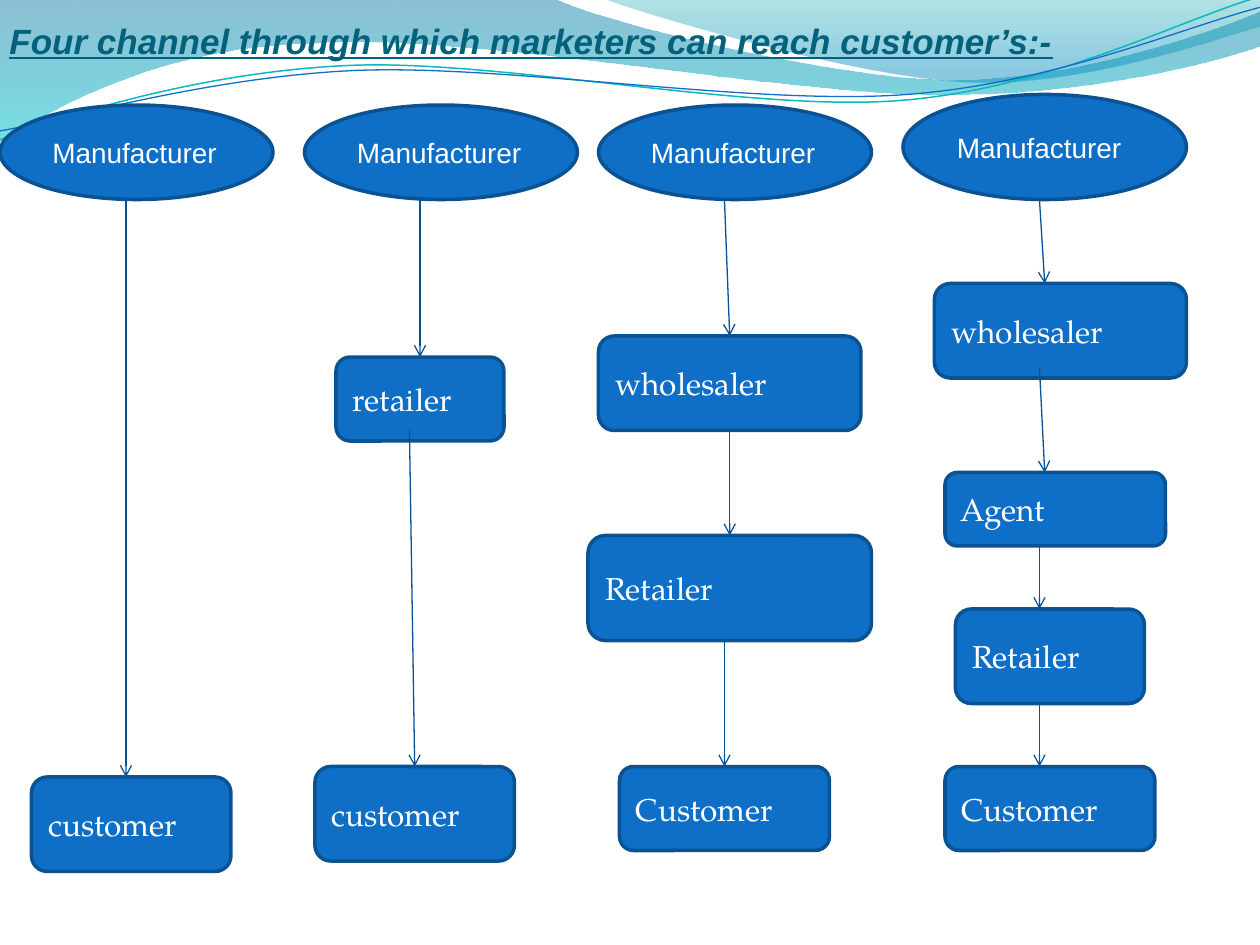
from lxml.etree import SubElement
from pptx import Presentation
from pptx.dml.color import RGBColor
from pptx.enum.shapes import MSO_CONNECTOR, MSO_SHAPE
from pptx.enum.text import MSO_ANCHOR, PP_ALIGN
from pptx.oxml.ns import qn
from pptx.util import Cm, Pt

BLUE, OUTLINE, ARROW = "0F6FC6", "0B5292", "095295"
TITLE = "Four channel through which marketers can reach customer’s:-"

BROAD_WAVE = [
    (0, 0), (11.18, -0.03),
    (12.09, 0.43, 16.87, 1.6, 19.25, 1.6), (21.67, 1.6, 24.33, 0.66, 25.4, 0.23),
    (25.43, 0.91),
    (24.97, 1.12, 22.1, 1.93, 18.95, 1.91), (15.8, 1.91, 9.7, 0.71, 6.53, 0.86),
    (3.28, 0.91, 1.17, 2.11, -0.03, 2.87), (0, 0),
]
RIGHT_WAVE = [
    (12.17, -0.03),
    (12.93, 0.28, 17.32, 1.57, 19.53, 1.65), (21.74, 1.75, 24.41, 0.81, 25.4, 0.53),
    (25.4, 0), (12.17, -0.03),
]
TEAL_CURVE = [
    (0, 2.82),
    (1.22, 2.36, 4.01, 1.45, 7.04, 1.32), (10.03, 1.19, 15.06, 2.26, 18.11, 2.03),
    (21.16, 1.8, 23.83, 0.38, 25.35, -0.05),
]
BLUE_CURVE = [
    (0, 2.64),
    (1.19, 2.44, 4.17, 1.55, 7.19, 1.42), (10.24, 1.3, 15.16, 2.13, 18.21, 1.91),
    (21.23, 1.7, 23.9, 0.53, 25.4, 0.15),
]

CHANNELS = [
    ((0, 10, 26, 9), [("customer", (3, 74, 19, 9), 12, 19, 12)]),
    ((29, 10, 26, 9), [("retailer", (32, 34, 16, 8), 40, 19, 40),
                       ("customer", (30, 73, 19, 9), 39, 41, 39.5)]),
    ((57, 10, 26, 9), [("wholesaler", (57, 32, 25, 9), 69, 19, 69.5),
                       ("Retailer", (56, 51, 27, 10), 69.5, 41, 69.5),
                       ("Customer", (59, 73, 20, 8), 69, 61, 69)]),
    ((86, 9, 27, 10), [("wholesaler", (89, 27, 24, 9), 99, 19, 99.5),
                       ("Agent", (90, 45, 21, 7), 99, 35, 99.5),
                       ("Retailer", (91, 58, 18, 9), 99, 52, 99),
                       ("Customer", (90, 73, 20, 8), 99, 67, 99)]),
]


def color(hex_string):
    """Return the colour for a hex string."""
    return RGBColor.from_string(hex_string)


def grid(units):
    """Return the length of units on a grid of 120 by 90 over the slide."""
    return Cm(25.4 * units / 120)


def add_outline(slide, steps, close):
    """Add a freeform whose six-number steps are Bézier curves."""
    points = [(Cm(step[i]), Cm(step[i + 1]))
              for step in steps for i in range(0, len(step), 2)]
    builder = slide.shapes.build_freeform(*points[0])
    builder.add_line_segments(points[1:], close=close)
    outline = builder.convert_to_shape()
    outline.shadow.inherit = False
    segments = iter(list(outline._element.spPr.iter(qn("a:lnTo"))))
    for step in steps[1:]:
        segment = next(segments)
        if len(step) == 6:
            curve = segment.makeelement(qn("a:cubicBezTo"))
            segment.addprevious(curve)
            for part in (segment, next(segments), next(segments)):
                curve.append(part[0])
                part.getparent().remove(part)
    return outline


def add_wave(slide, steps, stops):
    """Add a closed wave with a transparent top-to-bottom gradient."""
    wave = add_outline(slide, steps, True)
    wave.line.fill.background()
    wave.fill.gradient()
    wave.fill.gradient_angle = 270
    for stop, (position, tint, _) in zip(wave.fill.gradient_stops, stops):
        stop.position = position
        stop.color.rgb = color(tint)
    tints = wave._element.spPr.iter(qn("a:srgbClr"))
    for tint, (_, _, opacity) in zip(tints, stops):
        SubElement(tint, qn("a:alpha"), val=str(opacity * 1000))


def add_curve(slide, steps, tint, width):
    """Add an open curved line."""
    curve = add_outline(slide, steps, False)
    curve.fill.background()
    curve.line.color.rgb = color(tint)
    curve.line.width = Pt(width)


def add_title(slide):
    """Add the slide title, led by a larger space."""
    title = slide.shapes.add_textbox(0, 0, Cm(23.7), Cm(1.27)).text_frame
    title.word_wrap = True
    title.vertical_anchor = MSO_ANCHOR.BOTTOM
    title.margin_left = title.margin_right = title.margin_bottom = 0
    title.margin_top = Cm(0.13)
    heading = title.paragraphs[0]
    heading.font.color.rgb = color("04617B")
    lead, words = heading.add_run(), heading.add_run()
    lead.text, words.text = " ", TITLE
    lead.font.name, lead.font.size = "Calibri", Pt(24)
    words.font.name, words.font.size = "Arial", Pt(20)
    words.font.bold = words.font.italic = words.font.underline = True
    for run in (lead, words):
        run.font.color.rgb = color("04617B")


def add_node(slide, preset, label, box, font_name, size):
    """Add one labelled party of a channel."""
    node = slide.shapes.add_shape(preset, *map(grid, box))
    node.shadow.inherit = False
    node.fill.solid()
    node.fill.fore_color.rgb = color(BLUE)
    node.line.color.rgb = color(OUTLINE)
    node.line.width = Pt(2)
    node.text_frame.vertical_anchor = MSO_ANCHOR.MIDDLE
    paragraph = node.text_frame.paragraphs[0]
    paragraph.text = label
    paragraph.alignment = PP_ALIGN.LEFT
    paragraph.font.name, paragraph.font.size = font_name, Pt(size)
    paragraph.font.color.rgb = color("FFFFFF")


def add_arrow(slide, *ends):
    """Add an arrow between two grid points."""
    arrow = slide.shapes.add_connector(MSO_CONNECTOR.STRAIGHT, *map(grid, ends))
    arrow.line.color.rgb = color(ARROW)
    arrow.line.width = Pt(0.75)
    properties = arrow._element.spPr
    SubElement(properties.find(qn("a:ln")), qn("a:tailEnd"), type="arrow")
    SubElement(properties, qn("a:effectLst"))


def add_channel(slide, maker_box, stages):
    """Add a manufacturer, the stages below it and the arrows between them."""
    add_node(slide, MSO_SHAPE.OVAL, "Manufacturer", maker_box, "Arial", 16)
    for label, box, *_ in stages:
        add_node(slide, MSO_SHAPE.ROUNDED_RECTANGLE, label, box, "TeX Gyre Pagella", 18)
    for _, box, start_x, start_y, end_x in stages:
        add_arrow(slide, start_x, start_y, end_x, box[1])


def main():
    """Build the slide and save it."""
    deck = Presentation()
    deck.slide_width, deck.slide_height = Cm(25.4), Cm(19.05)
    slide = deck.slides.add_slide(deck.slide_layouts[6])
    add_wave(slide, BROAD_WAVE, [(0, "0074A1", 45), (1, "00C6CF", 55)])
    add_wave(slide, RIGHT_WAVE, [(0, "00A1A9", 30), (0.8, "008BBF", 45)])
    add_curve(slide, TEAL_CURVE, "0AB8BF", 0.85)
    add_curve(slide, BLUE_CURVE, BLUE, 0.75)
    add_title(slide)
    for maker_box, stages in CHANNELS:
        add_channel(slide, maker_box, stages)
    deck.save("out.pptx")


if __name__ == "__main__":
    main()
